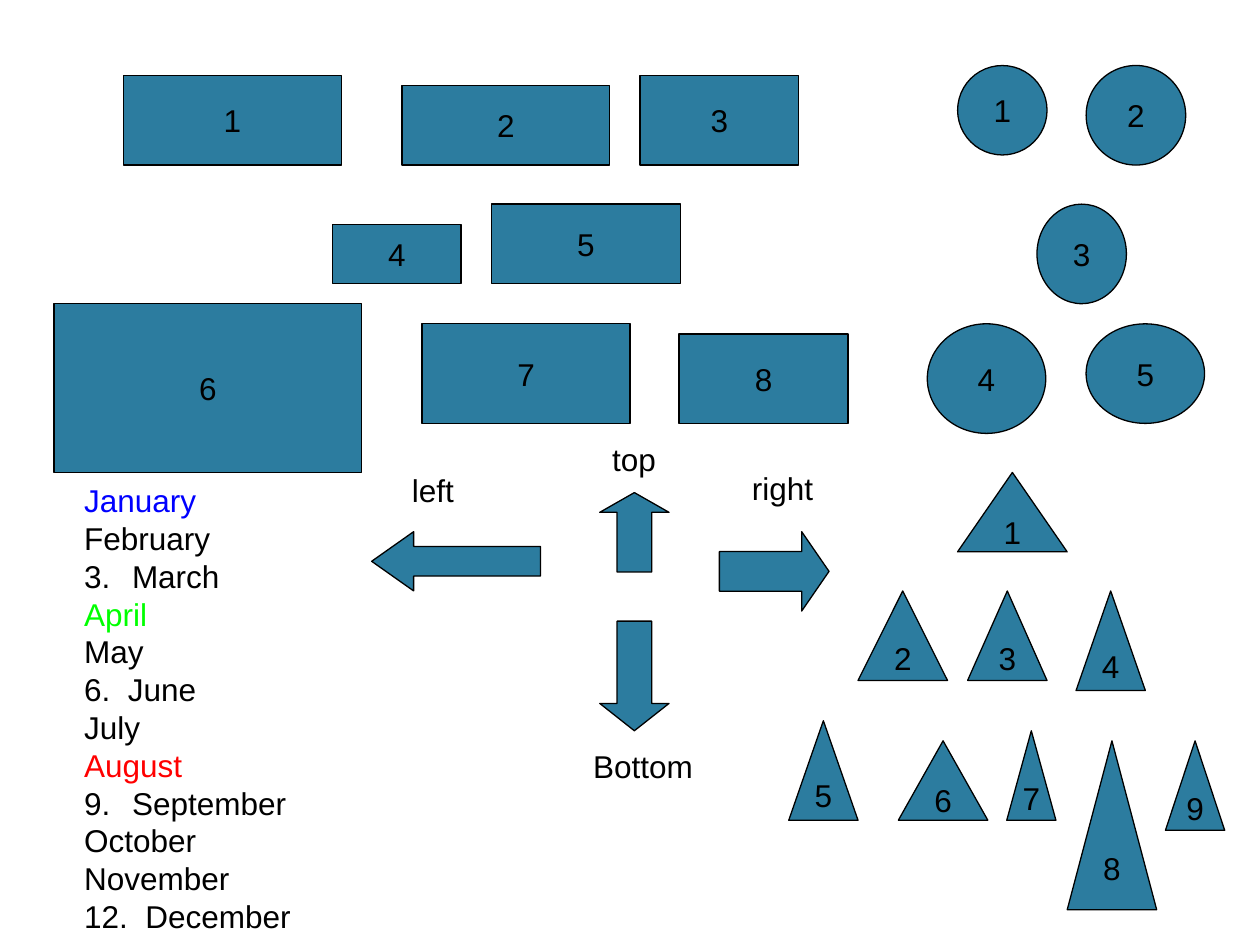
from lxml import etree
from pptx import Presentation
from pptx import util as u
from pptx.dml.color import RGBColor
from pptx.enum import shapes, text
from pptx.oxml import ns

PX = u.Inches(1) // 100
TEAL = RGBColor(0x2C, 0x7C, 0x9F)
BLACK = RGBColor(0, 0, 0)
BLUE = RGBColor(0, 0, 255)
GREEN = RGBColor(0, 255, 0)
RED = RGBColor(255, 0, 0)
KIND = shapes.MSO_SHAPE

RECTANGLES = [
    (98, 60, 173, 71), (319, 68, 165, 63), (508, 60, 126, 71),
    (264, 178, 102, 47), (390, 162, 150, 63),
    (43, 241, 244, 134), (335, 257, 165, 79), (539, 265, 134, 71),
]
CIRCLES = [
    (760, 52, 71, 71), (862, 52, 79, 79), (823, 162, 71, 79),
    (736, 257, 94, 87), (862, 257, 94, 79),
]
TRIANGLES = [
    (760, 375, 87, 63),
    (681, 469, 71, 71), (768, 469, 63, 71), (854, 469, 55, 79),
    (626, 572, 55, 79), (713, 588, 71, 63), (799, 580, 39, 71),
    (847, 588, 71, 134), (925, 588, 47, 71),
]
ARROWS = [
    (KIND.UP_ARROW, (476, 391, 55, 63), 0.285),
    (KIND.DOWN_ARROW, (476, 493, 55, 87), 0.394),
    (KIND.RIGHT_ARROW, (571, 422, 87, 63), 0.344),
    (KIND.LEFT_ARROW, (295, 422, 134, 47), 0.709),
]
DIRECTIONS = [
    ("top", (476, 344, 56, 40)), ("Bottom", (461, 588, 100, 40)),
    ("right", (587, 367, 70, 40)), ("left", (317, 369, 56, 40)),
]
MONTHS = ["January", "February", "March", "April", "May", "6.  June", "July",
          "August", "September", "October", "November", "12.  December"]
MONTH_COLORS = {"January": BLUE, "April": GREEN, "August": RED}
MONTH_NUMBERS = {"March": 3, "September": 9}
MONTH_INDENT = 38


def emu(box):
    return [length * PX for length in box]


def style_font(paragraph, color=BLACK):
    paragraph.font.name = "Arial"
    paragraph.font.size = u.Pt(18)
    paragraph.font.color.rgb = color


def add_figure(slide, kind, box):
    figure = slide.shapes.add_shape(kind, *emu(box))
    figure.shadow.inherit = False
    figure.fill.solid()
    figure.fill.fore_color.rgb = TEAL
    figure.line.color.rgb = BLACK
    figure.line.width = u.Pt(0.75)
    return figure


def add_numbered_figures(slide, kind, boxes):
    for number, box in enumerate(boxes, 1):
        frame = add_figure(slide, kind, box).text_frame
        frame.word_wrap = False
        frame.vertical_anchor = text.MSO_ANCHOR.MIDDLE
        label = frame.paragraphs[0]
        label.text = str(number)
        label.alignment = text.PP_ALIGN.CENTER
        style_font(label)


def add_arrow(slide, kind, box, head):
    arrow = add_figure(slide, kind, box)
    arrow.adjustments[0] = 0.5
    arrow.adjustments[1] = head


def add_label(slide, lines, box):
    frame = slide.shapes.add_textbox(*emu(box)).text_frame
    frame.word_wrap = False
    frame.auto_size = text.MSO_AUTO_SIZE.SHAPE_TO_FIT_TEXT
    frame.text = "\n".join(lines)
    for line in frame.paragraphs:
        style_font(line, MONTH_COLORS.get(line.text, BLACK))
    return frame


def indent_month(month):
    properties = month._p.get_or_add_pPr()
    properties.set("marL", str(MONTH_INDENT * PX))
    properties.set("indent", str(-MONTH_INDENT * PX))
    if month.text in MONTH_NUMBERS:
        numbering = etree.Element(ns.qn("a:buAutoNum"), type="arabicPeriod",
                                  startAt=str(MONTH_NUMBERS[month.text]))
    else:
        numbering = etree.Element(ns.qn("a:buNone"))
    properties.insert(0, numbering)


def main():
    deck = Presentation()
    deck.slide_width, deck.slide_height = emu((1000, 750))
    slide = deck.slides.add_slide(deck.slide_layouts[6])

    add_numbered_figures(slide, KIND.RECTANGLE, RECTANGLES)
    add_numbered_figures(slide, KIND.OVAL, CIRCLES)
    add_numbered_figures(slide, KIND.ISOSCELES_TRIANGLE, TRIANGLES)

    for month in add_label(slide, MONTHS, (57, 377, 184, 370)).paragraphs:
        indent_month(month)
    for arrow in ARROWS:
        add_arrow(slide, *arrow)
    for direction, box in DIRECTIONS:
        add_label(slide, [direction], box)

    deck.save("out.pptx")


if __name__ == "__main__":
    main()
